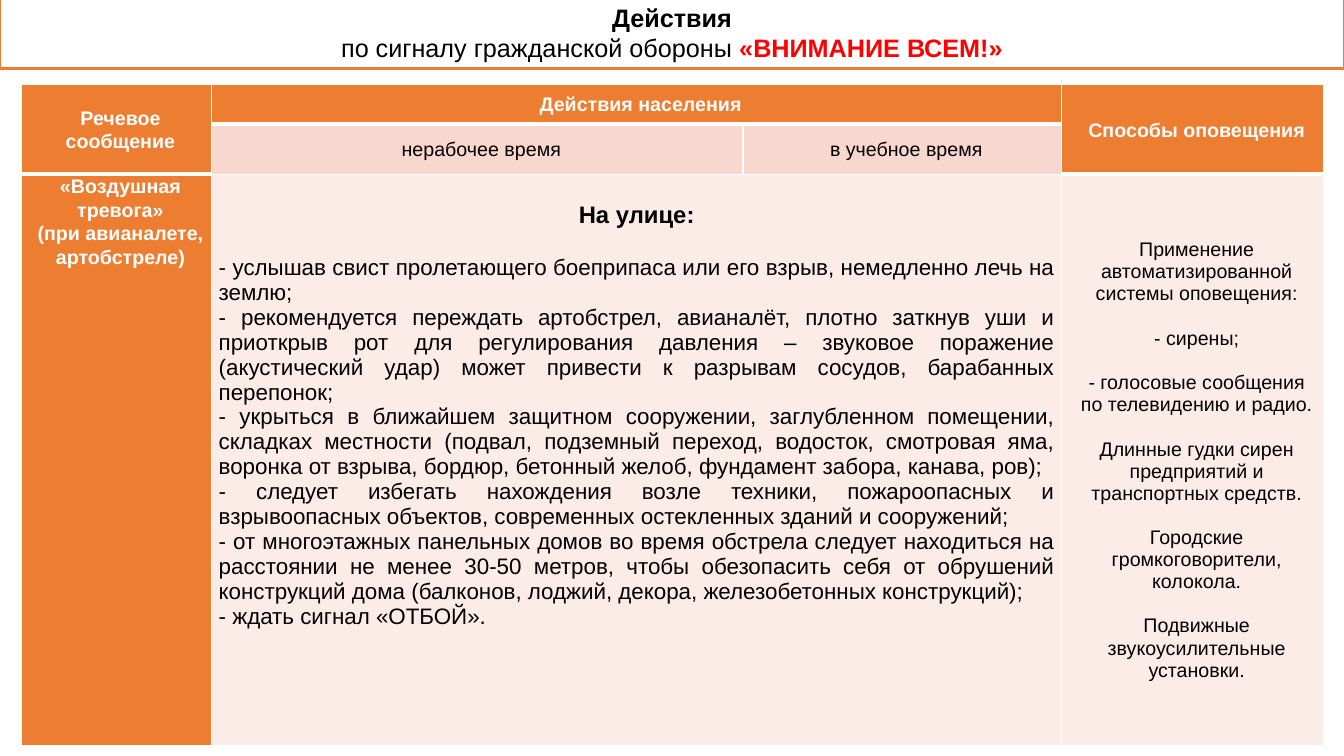
from dataclasses import dataclass

from lxml import etree
from pptx import Presentation
from pptx.dml.color import RGBColor
from pptx.enum.shapes import MSO_SHAPE
from pptx.enum.text import MSO_ANCHOR, MSO_AUTO_SIZE, PP_ALIGN
from pptx.oxml.ns import qn
from pptx.util import Pt

RECTANGLE = MSO_SHAPE.RECTANGLE
TOP, MIDDLE = MSO_ANCHOR.TOP, MSO_ANCHOR.MIDDLE
CENTER, JUSTIFY = PP_ALIGN.CENTER, PP_ALIGN.JUSTIFY
GROW_TO_TEXT = MSO_AUTO_SIZE.SHAPE_TO_FIT_TEXT
EMU_PER_PX = 9144
BLANK_LAYOUT = 6


@dataclass(frozen=True)
class Theme:
    font: str = "Arial"
    white: str = "FFFFFF"
    black: str = "000000"
    red: str = "FF0000"
    orange: str = "ED7D31"
    peach: str = "F8D7CE"
    pale: str = "FCECE8"
    title_size: int = 18
    heading_size: int = 17
    body_size: int = 16
    cell_size: int = 14
    thin: int = 1
    thick: int = 3


THEME = Theme()

COLUMN_WIDTHS = (189, 527, 316, 260)
ROW_HEIGHTS = (39, 47, 567)
# (row, column) of cells whose top edge is thick
THICK_TOP_EDGES = {(1, 0), (1, 1), (1, 2), (1, 3), (2, 0), (2, 3)}

STREET_ACTIONS = (
    "- услышав свист пролетающего боеприпаса или его взрыв, немедленно лечь на землю;",
    "- рекомендуется переждать артобстрел, авианалёт, плотно заткнув уши и приоткрыв рот "
    "для регулирования давления – звуковое поражение (акустический удар) может привести "
    "к разрывам сосудов, барабанных перепонок;",
    "- укрыться в ближайшем защитном сооружении, заглубленном помещении, складках местности "
    "(подвал, подземный переход, водосток, смотровая яма, воронка от взрыва, бордюр, "
    "бетонный желоб, фундамент забора, канава, ров);",
    "- следует избегать нахождения возле техники, пожароопасных и взрывоопасных объектов, "
    "современных остекленных зданий и сооружений;",
    "- от многоэтажных панельных домов во время обстрела следует находиться на расстоянии "
    "не менее 30-50 метров, чтобы обезопасить себя от обрушений конструкций дома "
    "(балконов, лоджий, декора, железобетонных конструкций);",
    "- ждать сигнал «ОТБОЙ».",
)
ALERT_METHODS = (
    "Применение автоматизированной системы оповещения:",
    "- сирены;",
    "- голосовые сообщения по телевидению и радио.",
    "Длинные гудки сирен предприятий и транспортных средств.",
    "Городские громкоговорители, колокола.",
    "Подвижные звукоусилительные установки.",
)


def px(value):
    return value * EMU_PER_PX


def rgb(color):
    return RGBColor.from_string(color)


def write(frame, text, size=THEME.cell_size, color=THEME.black, bold=False, align=CENTER,
          indent=0, line_spacing=None, space_before=0, same_line=False):
    """Add a paragraph, or with same_line a further run of the last one."""
    paragraph = frame.paragraphs[-1]
    if not same_line:
        if paragraph.runs:
            paragraph = frame.add_paragraph()
            paragraph.space_before = Pt(space_before)
        paragraph.alignment = align
        if indent:
            paragraph._p.get_or_add_pPr().set("marL", str(px(indent)))
        if line_spacing:
            paragraph.line_spacing = line_spacing
    run = paragraph.add_run()
    run.text = text
    run.font.name = THEME.font
    run.font.size = Pt(size)
    run.font.bold = bold
    run.font.color.rgb = rgb(color)


def add_title(slide):
    shape = slide.shapes.add_shape(RECTANGLE, 0, px(-3), px(1333), px(71))
    shape.shadow.inherit = False
    shape.fill.solid()
    shape.fill.fore_color.rgb = rgb(THEME.white)
    fill_color = shape._element.spPr.find(f".//{qn('a:srgbClr')}")
    etree.SubElement(fill_color, qn("a:alpha"), val="50000")
    shape.line.color.rgb = rgb(THEME.orange)
    shape.line.width = Pt(2)
    frame = shape.text_frame
    frame.word_wrap = True
    frame.auto_size = GROW_TO_TEXT
    frame.vertical_anchor = MIDDLE
    size = THEME.title_size
    write(frame, "Действия", size=size, bold=True)
    write(frame, "по сигналу гражданской обороны ", size=size)
    write(frame, "«ВНИМАНИЕ ВСЕМ!»", size=size, color=THEME.red, bold=True, same_line=True)


def set_borders(cell, row, column):
    def edge_width(edge_row):
        return THEME.thick if (edge_row, column) in THICK_TOP_EDGES else THEME.thin

    widths = {"lnL": THEME.thin, "lnR": THEME.thin,
              "lnT": edge_width(row), "lnB": edge_width(row + 1)}
    properties = cell._tc.get_or_add_tcPr()
    for position, (tag, width) in enumerate(widths.items()):
        line = etree.Element(qn(f"a:{tag}"), w=str(Pt(width)))
        fill = etree.SubElement(line, qn("a:solidFill"))
        etree.SubElement(fill, qn("a:srgbClr"), val=THEME.white)
        properties.insert(position, line)


def style_cell(cell, fill, anchor=MIDDLE, top=0):
    cell.fill.solid()
    cell.fill.fore_color.rgb = rgb(fill)
    cell.vertical_anchor = anchor
    cell.margin_left = cell.margin_right = px(7)
    cell.margin_top, cell.margin_bottom = px(top), 0
    return cell.text_frame


def add_label(cell, *lines, fill=THEME.orange, color=THEME.white, bold=True, anchor=MIDDLE):
    frame = style_cell(cell, fill, anchor)
    for line in lines:
        write(frame, line, color=color, bold=bold, indent=8, line_spacing=1.07)


def add_street_actions(cell):
    frame = style_cell(cell, THEME.pale, TOP, top=27)
    write(frame, "На улице:", size=THEME.heading_size, bold=True)
    for index, action in enumerate(STREET_ACTIONS):
        write(frame, action, size=THEME.body_size, align=JUSTIFY,
              space_before=0 if index else 19.5)


def add_alert_methods(cell):
    frame = style_cell(cell, THEME.pale)
    for method in ALERT_METHODS:
        write(frame, method, indent=8, space_before=16)


def add_actions_table(slide):
    table = slide.shapes.add_table(
        len(ROW_HEIGHTS), len(COLUMN_WIDTHS), px(21), px(84),
        px(sum(COLUMN_WIDTHS)), px(sum(ROW_HEIGHTS))).table
    table.first_row = table.horz_banding = False
    for column, width in zip(table.columns, COLUMN_WIDTHS):
        column.width = px(width)
    for row, height in zip(table.rows, ROW_HEIGHTS):
        row.height = px(height)
    for start, end in (((0, 0), (1, 0)), ((0, 1), (0, 2)),
                       ((0, 3), (1, 3)), ((2, 1), (2, 2))):
        table.cell(*start).merge(table.cell(*end))

    add_label(table.cell(0, 0), "Речевое сообщение")
    add_label(table.cell(0, 1), "Действия населения")
    add_label(table.cell(0, 3), "Способы оповещения")
    for column, label in enumerate(("нерабочее время", "в учебное время"), start=1):
        add_label(table.cell(1, column), label,
                  fill=THEME.peach, color=THEME.black, bold=False)
    add_label(table.cell(2, 0), "«Воздушная тревога»", "(при авианалете, артобстреле)",
              anchor=TOP)
    add_street_actions(table.cell(2, 1))
    add_alert_methods(table.cell(2, 3))

    for row in range(len(ROW_HEIGHTS)):
        for column in range(len(COLUMN_WIDTHS)):
            set_borders(table.cell(row, column), row, column)


def main():
    presentation = Presentation()
    presentation.slide_width, presentation.slide_height = px(1333), px(750)
    slide = presentation.slides.add_slide(presentation.slide_layouts[BLANK_LAYOUT])
    add_title(slide)
    add_actions_table(slide)
    presentation.save("out.pptx")


if __name__ == "__main__":
    main()
